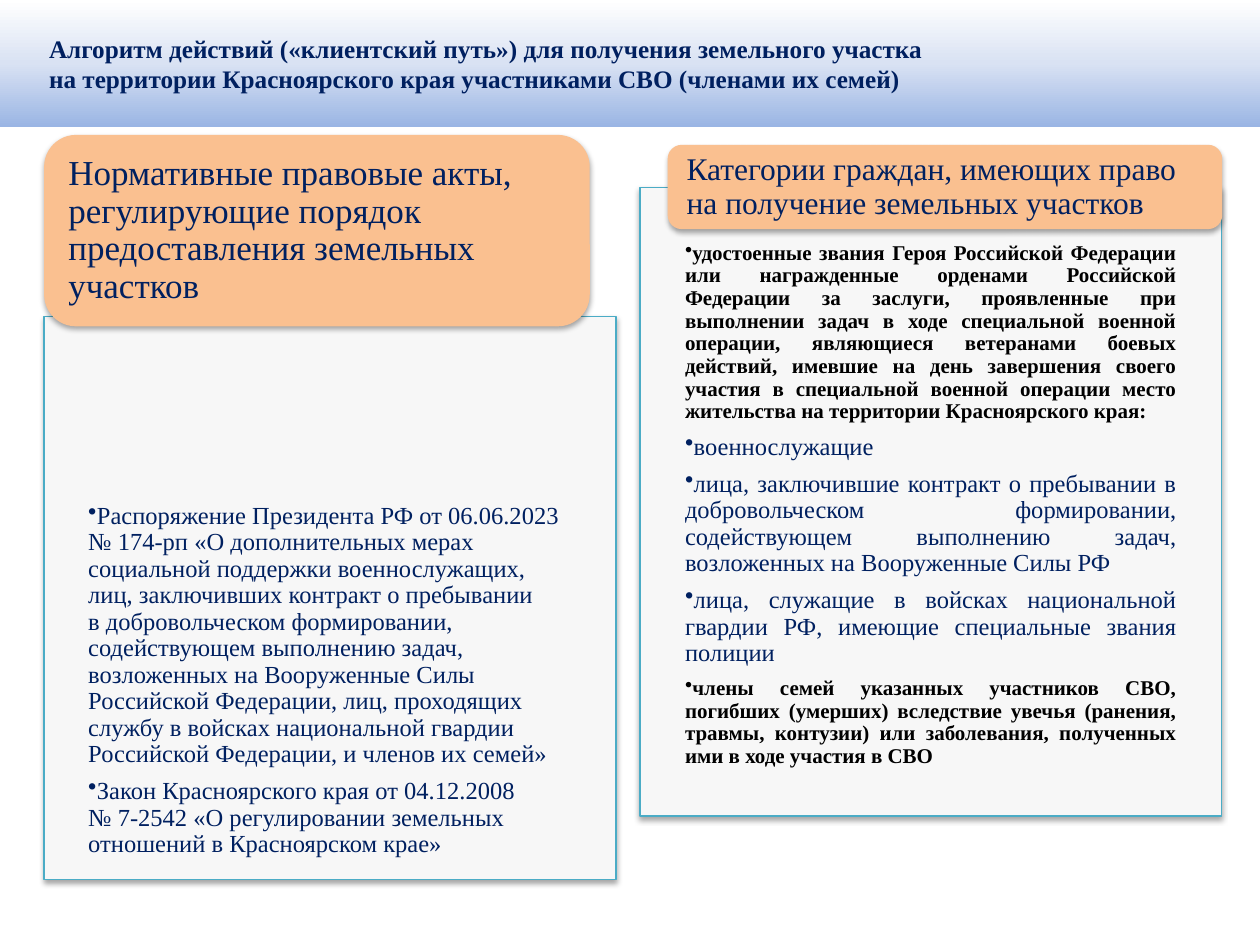
from lxml.etree import SubElement as Sub
from pptx import Presentation
from pptx.dml.color import RGBColor as Rgb
from pptx.enum.shapes import MSO_SHAPE as Kind
from pptx.enum.text import MSO_ANCHOR as Anchor, PP_ALIGN as Align
from pptx.oxml.ns import qn
from pptx.util import Cm, Pt

FONT = "Times New Roman"
HEX = {
    "navy": "002060", "black": "000000", "peach": "FAC090",
    "panel": "F7F7F7", "teal": "4BACC6",
    "deep": "9AB5E4", "mid": "D9E2F3", "white": "FFFFFF",
}

TITLE = ("Алгоритм действий («клиентский путь») для получения земельного участка\n"
         "на территории Красноярского края участниками СВО (членами их семей)")

# Each item: text, is it bold
RIGHTS = [
    ("удостоенные звания Героя Российской Федерации или награжденные орденами "
     "Российской Федерации за заслуги, проявленные при выполнении задач в ходе "
     "специальной военной операции, являющиеся ветеранами боевых действий, "
     "имевшие на день завершения своего участия в специальной военной операции "
     "место жительства на территории Красноярского края:", True),
    ("военнослужащие", False),
    ("лица, заключившие контракт о пребывании в добровольческом формировании, "
     "содействующем выполнению задач, возложенных на Вооруженные Силы РФ", False),
    ("лица, служащие в войсках национальной гвардии РФ, имеющие специальные "
     "звания полиции", False),
    ("члены семей указанных участников СВО, погибших (умерших) вследствие увечья "
     "(ранения, травмы, контузии) или заболевания, полученных ими в ходе участия "
     "в СВО", True),
]
LAWS = [
    ("Распоряжение Президента РФ от 06.06.2023 № 174-рп «О дополнительных мерах "
     "социальной поддержки военнослужащих, лиц, заключивших контракт о пребывании\n"
     "в добровольческом формировании, содействующем выполнению задач, возложенных "
     "на Вооруженные Силы Российской Федерации, лиц, проходящих службу в войсках "
     "национальной гвардии Российской Федерации, и членов их семей»", False),
    ("Закон Красноярского края от 04.12.2008\n№ 7-2542 «О регулировании земельных "
     "отношений в Красноярском крае»", False),
]


def color(name):
    return Rgb.from_string(HEX[name])


def add_box(slide, kind, area, pads, anchor):
    """Add a plain shape; area and pads are in centimetres."""
    box = slide.shapes.add_shape(kind, *map(Cm, area))
    box.shadow.inherit = False
    box.line.fill.background()
    frame = box.text_frame
    frame.word_wrap = True
    frame.vertical_anchor = anchor
    (frame.margin_left, frame.margin_top,
     frame.margin_right, frame.margin_bottom) = map(Cm, pads)
    return box


def add_shadow(box):
    effects = box._element.spPr.find(qn("a:effectLst"))
    outer = Sub(effects, qn("a:outerShdw"), blurRad=str(Pt(3.1)),
                dist=str(Pt(1.8)), dir="5400000", rotWithShape="0")
    tone = Sub(outer, qn("a:srgbClr"), val=HEX["black"])
    Sub(tone, qn("a:alpha"), val="35000")


def set_text(par, text, size, tone="navy", bold=False, align=Align.LEFT):
    par.text = text
    par.alignment = align
    font = par.font
    font.name, font.size, font.bold = FONT, Pt(size), bold
    font.color.rgb = color(tone)


def add_bullet(par):
    props = par._p.get_or_add_pPr()
    props.set("marL", "0")
    props.set("indent", str(-Cm(0.3)))
    Sub(props, qn("a:buChar"), char="•")


def add_panel(slide, area, pads, items, align):
    box = add_box(slide, Kind.RECTANGLE, area, pads, Anchor.TOP)
    box.fill.solid()
    box.fill.fore_color.rgb = color("panel")
    box.line.color.rgb = color("teal")
    box.line.width = Pt(0.75)
    add_shadow(box)
    frame = box.text_frame
    for i, (text, bold) in enumerate(items):
        par = frame.add_paragraph() if i else frame.paragraphs[0]
        par.line_spacing = 0.9
        par.space_after = Pt(6)
        add_bullet(par)
        size, tone = (12, "black") if bold else (14, "navy")
        set_text(par, text, size, tone, bold, align)


def add_head(slide, area, text, size):
    box = add_box(slide, Kind.ROUNDED_RECTANGLE, area, (0.3, 0, 0.3, 0),
                  Anchor.MIDDLE)
    box.fill.solid()
    box.fill.fore_color.rgb = color("peach")
    add_shadow(box)
    par = box.text_frame.paragraphs[0]
    par.line_spacing = 0.9
    set_text(par, text, size)


def add_title(slide):
    box = add_box(slide, Kind.RECTANGLE, (0, 0, 25.4, 2.56),
                  (0.99, 0.13, 0.25, 0.13), Anchor.MIDDLE)
    box.fill.gradient()
    box.fill.gradient_angle = 90
    stops = box._element.spPr.find(qn("a:gradFill")).find(qn("a:gsLst"))
    for stop in list(stops):
        stops.remove(stop)
    for i, name in enumerate(("deep", "mid", "white")):
        stop = Sub(stops, qn("a:gs"), pos=str(i * 50000))
        Sub(stop, qn("a:srgbClr"), val=HEX[name])
    set_text(box.text_frame.paragraphs[0], TITLE, 14.4, bold=True)


def main():
    deck = Presentation()
    deck.slide_width, deck.slide_height = Cm(25.4), Cm(19.05)
    slide = deck.slides.add_slide(deck.slide_layouts[6])

    # Right column: who is entitled
    add_panel(slide, (12.9, 3.78, 11.73, 12.67), (0.91, 1.1, 0.91, 0.23),
              RIGHTS, Align.JUSTIFY)
    add_head(slide, (13.46, 2.92, 11.18, 1.7),
             "Категории граждан, имеющих право на получение земельных участков", 18)

    # Left column: legal acts
    add_panel(slide, (0.89, 6.38, 11.53, 11.35), (0.89, 3.76, 0.89, 0.28),
              LAWS, Align.LEFT)
    add_head(slide, (0.89, 2.72, 11, 3.86),
             "Нормативные правовые акты, регулирующие порядок предоставления "
             "земельных участков", 20)

    # Title band
    add_title(slide)
    deck.save("out.pptx")


if __name__ == "__main__":
    main()
